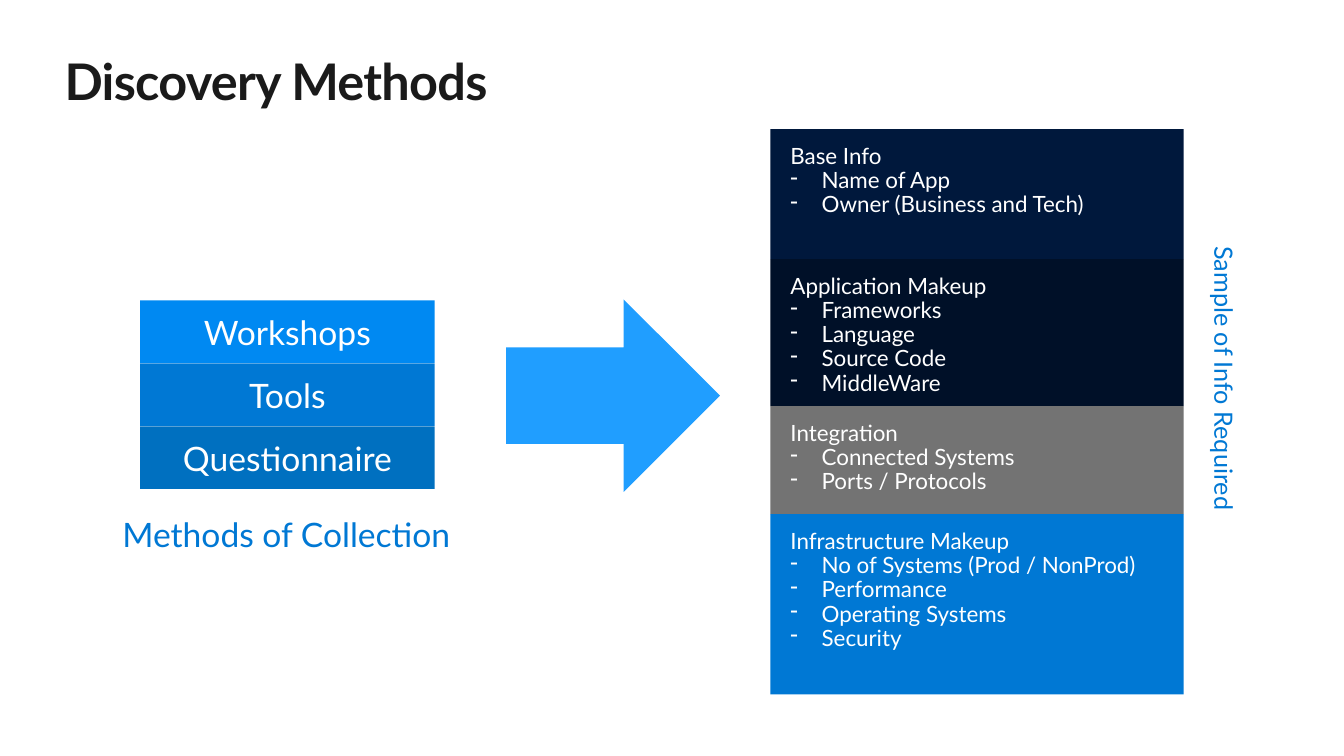
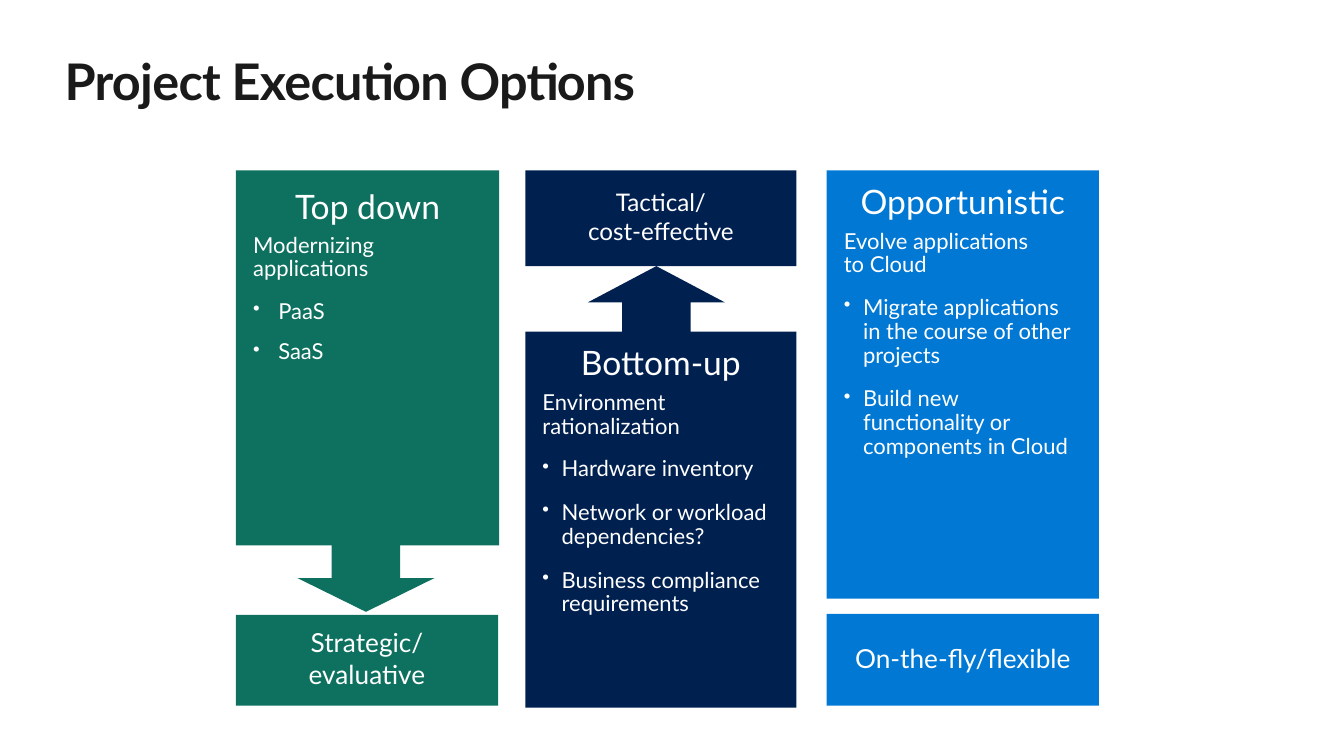
"""Builds two slides on application discovery and project execution options."""
from dataclasses import dataclass

from lxml import etree
from pptx import Presentation
from pptx import util as u
from pptx.dml.color import RGBColor
from pptx.enum import shapes, text
from pptx.oxml.ns import qn

FONT = "Lato"
WHITE = RGBColor(0xFF, 0xFF, 0xFF)
INK = RGBColor(0x1A, 0x1A, 0x1A)
BLUE = RGBColor(0x00, 0x78, 0xD4)
BRIGHT_BLUE = RGBColor(0x00, 0x89, 0xF2)
DEEP_BLUE = RGBColor(0x00, 0x70, 0xC0)
LIGHT_BLUE = RGBColor(0x20, 0x9E, 0xFF)
NIGHT = RGBColor(0x00, 0x18, 0x3C)
MIDNIGHT = RGBColor(0x00, 0x10, 0x28)
NAVY = RGBColor(0x00, 0x20, 0x50)
GRAY = RGBColor(0x73, 0x73, 0x73)
GREEN = RGBColor(0x0E, 0x71, 0x5F)

RECT = shapes.MSO_SHAPE.RECTANGLE
TOP, MIDDLE = text.MSO_ANCHOR.TOP, text.MSO_ANCHOR.MIDDLE
LEFT, CENTER = text.PP_ALIGN.LEFT, text.PP_ALIGN.CENTER
NO_INSETS = (0, 0, 0, 0)
WIDE_INSETS = (0.2, 0.16, 0.2, 0.16)
CARD_INSETS = (0.17, 0.15, 0.17, 0.15)
LABEL_INSETS = (0.17, 0.11, 0.17, 0.15)


@dataclass(frozen=True)
class Box:
    left: float
    top: float
    width: float
    height: float

    def lengths(self) -> list:
        return [u.Inches(v) for v in (self.left, self.top, self.width, self.height)]


@dataclass(frozen=True)
class Line:
    words: str
    size: float
    align: text.PP_ALIGN = LEFT
    spacing: float = 0.9
    after: float = 0
    bullet: str = ""
    bullet_size: int = 100
    indent: float = 0
    color: RGBColor = WHITE
    bold: bool = False
    tracking: int = 0


@dataclass(frozen=True)
class Panel:
    heading: str
    items: tuple
    height: float
    color: RGBColor


@dataclass(frozen=True)
class Card:
    heading: str
    subtitle: str
    items: tuple
    box: Box
    color: RGBColor
    label: str
    label_box: Box
    label_size: float
    heading_spacing: float = 0.9
    indent: float = 0.19
    item_gap: float = 14.3


METHODS = (("Workshops", BRIGHT_BLUE), ("Tools", BLUE), ("Questionnaire", DEEP_BLUE))
PANELS = (
    Panel("Base Info", ("Name of App", "Owner (Business and Tech)"), 1.29, NIGHT),
    Panel("Application Makeup", ("Frameworks", "Language", "Source Code", "MiddleWare"),
          1.46, MIDNIGHT),
    Panel("Integration", ("Connected Systems", "Ports / Protocols"), 1.07, GRAY),
    Panel("Infrastructure Makeup",
          ("No of Systems (Prod / NonProd)", "Performance", "Operating Systems", "Security"),
          1.79, BLUE),
)
CARDS = (
    Card("Top down", "Modernizing applications", ("PaaS", "SaaS"),
         Box(2.34, 1.69, 2.61, 3.72), GREEN,
         "Strategic/\nevaluative", Box(2.34, 6.1, 2.6, 0.9), 18.7,
         heading_spacing=1, indent=0.25, item_gap=11.8),
    Card("Bottom-up", "Environment rationalization",
         ("Hardware inventory", "Network or workload dependencies?",
          "Business compliance requirements"),
         Box(5.21, 3.29, 2.69, 3.73), NAVY,
         "Tactical/\ncost-effective", Box(5.21, 1.69, 2.69, 0.95), 17.3),
    Card("Opportunistic", "Evolve applications\nto Cloud",
         ("Migrate applications\nin the course of other projects",
          "Build new functionality or components in Cloud"),
         Box(8.2, 1.69, 2.7, 4.25), BLUE,
         "On-the-fly/flexible", Box(8.2, 6.09, 2.7, 0.91), 18.7),
)


def add_bullet(p, line: Line) -> None:
    pPr = p._p.get_or_add_pPr()
    pPr.set("marL", str(u.Inches(line.indent)))
    pPr.set("indent", str(-u.Inches(line.indent)))
    etree.SubElement(pPr, qn("a:buSzPct")).set("val", str(line.bullet_size * 1000))
    etree.SubElement(pPr, qn("a:buChar")).set("char", line.bullet)


def write(sp, lines: list[Line], insets: tuple, anchor=TOP) -> None:
    tf = sp.text_frame
    tf.word_wrap = True
    tf.vertical_anchor = anchor
    tf.margin_left, tf.margin_top, tf.margin_right, tf.margin_bottom = map(u.Inches, insets)
    for i, line in enumerate(lines):
        p = tf.add_paragraph() if i else tf.paragraphs[0]
        if line.bullet:
            add_bullet(p, line)
        p.alignment = line.align
        p.line_spacing = line.spacing
        p.space_after = u.Pt(line.after)
        for j, words in enumerate(line.words.split("\n")):
            if j:
                p.add_line_break()
            r = p.add_run()
            r.text = words
            r.font.name = FONT
            r.font.size = u.Pt(line.size)
            r.font.bold = line.bold
            r.font.color.rgb = line.color
            if line.tracking:
                r._r.get_or_add_rPr().set("spc", str(line.tracking))


def add_block(s, box: Box, color: RGBColor, kind=RECT):
    sp = s.shapes.add_shape(kind, *box.lengths())
    sp.shadow.inherit = False
    sp.fill.solid()
    sp.fill.fore_color.rgb = color
    sp.line.fill.background()
    return sp


def add_caption(s, box: Box, line: Line, insets: tuple = WIDE_INSETS):
    sp = s.shapes.add_textbox(*box.lengths())
    write(sp, [line], insets)
    return sp


def add_titled_slide(prs, title: str):
    s = prs.slides.add_slide(prs.slide_layouts[6])
    line = Line(title, 36, spacing=1, color=INK, bold=True, tracking=-50)
    add_caption(s, Box(0.64, 0.5, 12.05, 0.61), line, NO_INSETS)
    return s


def add_discovery_slide(prs) -> None:
    s = add_titled_slide(prs, "Discovery Methods")
    for i, (name, color) in enumerate(METHODS):
        sp = add_block(s, Box(1.39, 2.98 + i * 0.625, 2.92, 0.62), color)
        write(sp, [Line(name, 24, CENTER)], WIDE_INSETS)
    add_caption(s, Box(-0.24, 4.98, 6.16, 0.69),
                Line("Methods of Collection", 24, CENTER, color=BLUE))
    add_block(s, Box(5.02, 2.97, 2.12, 1.91), LIGHT_BLUE, shapes.MSO_SHAPE.RIGHT_ARROW)
    top = 1.28
    for panel in PANELS:
        sp = add_block(s, Box(7.64, top, 4.1, panel.height), panel.color)
        items = [Line(item, 16, bullet="-", indent=0.31) for item in panel.items]
        write(sp, [Line(panel.heading, 16), *items], WIDE_INSETS)
        top += panel.height
    side = add_caption(s, Box(10.52, 3.52, 3.15, 0.6),
                       Line("Sample of Info Required", 18, color=BLUE))
    side.rotation = 90


def add_card(s, card: Card) -> None:
    items = [Line(item, 15.7, after=card.item_gap, bullet="•", bullet_size=90,
                  indent=card.indent) for item in card.items]
    heading = Line(card.heading, 24, CENTER, card.heading_spacing, 5.9)
    subtitle = Line(card.subtitle, 15.7, after=13.6)
    write(add_block(s, card.box, card.color), [heading, subtitle, *items], CARD_INSETS)
    label = Line(card.label, card.label_size, CENTER, 1)
    write(add_block(s, card.label_box, card.color), [label], LABEL_INSETS, MIDDLE)


def add_options_slide(prs) -> None:
    s = add_titled_slide(prs, "Project Execution Options")
    for card in CARDS:
        add_card(s, card)
    add_block(s, Box(2.95, 5.4, 1.36, 0.67), GREEN, shapes.MSO_SHAPE.DOWN_ARROW)
    add_block(s, Box(5.83, 2.64, 1.36, 0.72), NAVY, shapes.MSO_SHAPE.UP_ARROW)


def main() -> None:
    prs = Presentation()
    prs.slide_width, prs.slide_height = u.Inches(13.33), u.Inches(7.5)
    add_discovery_slide(prs)
    add_options_slide(prs)
    prs.save("out.pptx")


if __name__ == "__main__":
    main()
